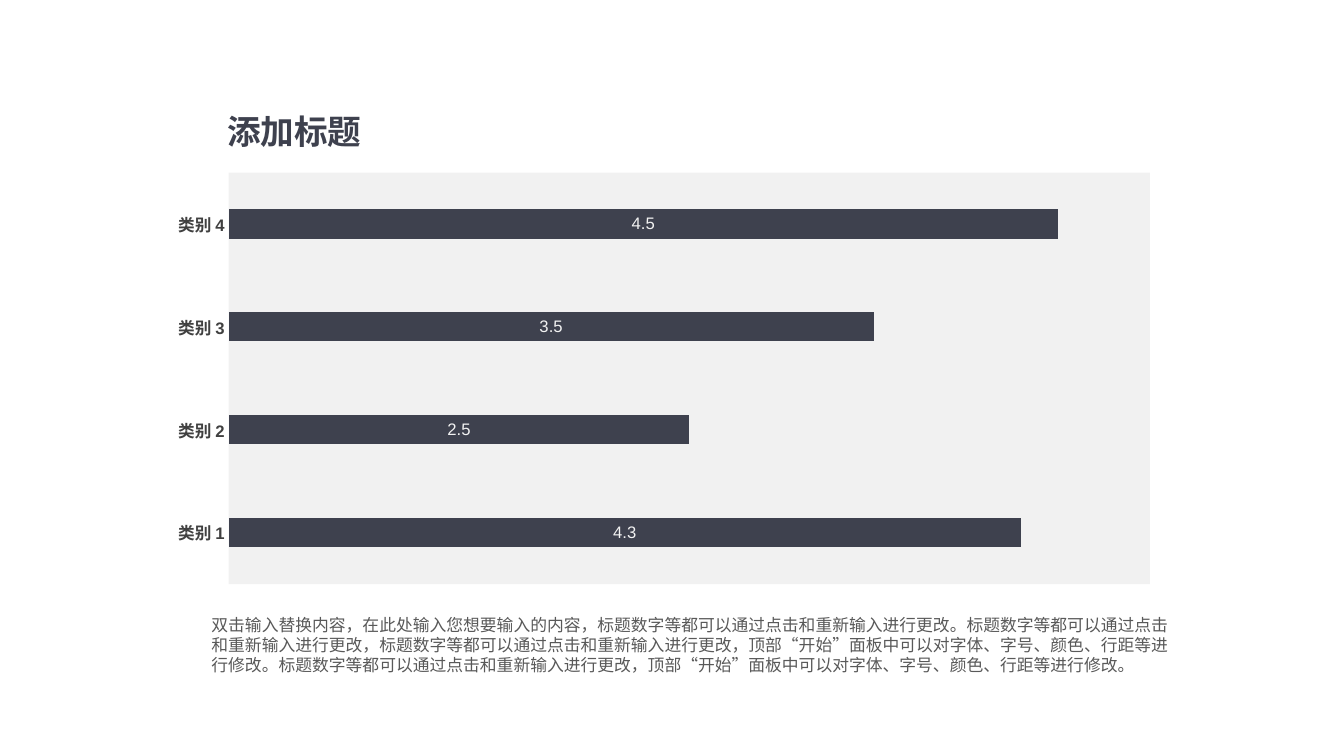
from lxml import etree
from pptx import Presentation
from pptx.chart.data import CategoryChartData
from pptx.dml.color import RGBColor
from pptx.enum.chart import XL_CHART_TYPE, XL_LABEL_POSITION, XL_TICK_MARK
from pptx.enum.text import MSO_AUTO_SIZE, PP_ALIGN
from pptx.oxml import parse_xml
from pptx.oxml.ns import nsdecls, qn
from pptx.util import Cm, Pt

STACKED = XL_CHART_TYPE.BAR_STACKED
MIDDLE = XL_LABEL_POSITION.CENTER
NO_TICK = XL_TICK_MARK.NONE
GROW = MSO_AUTO_SIZE.SHAPE_TO_FIT_TEXT
LEFT, CENTER = PP_ALIGN.LEFT, PP_ALIGN.CENTER

NAVY = RGBColor(0x3E, 0x41, 0x4E)
DARK = RGBColor(0x40, 0x40, 0x40)
GREY = RGBColor(0x59, 0x59, 0x59)
PALE = RGBColor(0xF2, 0xF2, 0xF2)
PANEL = RGBColor(0xF1, 0xF1, 0xF1)

HEAD = {"name": "Arial", "size": Pt(24), "bold": True, "color": NAVY}
BODY = {"name": "Arial", "size": Pt(12), "color": GREY}
BASE = {"name": "Arial", "size": Pt(10), "color": PALE}
AXIS = {"name": "Arial", "size": Pt(11.9), "bold": True, "color": DARK}
LABEL = {"name": "Arial", "size": Pt(11.9), "bold": False, "color": PALE}

TITLE = "添加标题"
NOTE = (
    "双击输入替换内容，在此处输入您想要输入的内容，标题数字等都可以通过点击和重新输入进行更改。"
    "标题数字等都可以通过点击和重新输入进行更改，标题数字等都可以通过点击和重新输入进行更改，"
    "顶部“开始”面板中可以对字体、字号、颜色、行距等进行修改。"
    "标题数字等都可以通过点击和重新输入进行更改，"
    "顶部“开始”面板中可以对字体、字号、颜色、行距等进行修改。"
)
VALUES = {"类别 1": 4.3, "类别 2": 2.5, "类别 3": 3.5, "类别 4": 4.5}
INNER = {"x": 0.086, "y": 0.035, "w": 0.914, "h": 0.93}


def style(font, form):
    for key, value in form.items():
        if key == "color":
            font.color.rgb = value
        else:
            setattr(font, key, value)


def add_text(slide, box, text, form, align):
    frame = slide.shapes.add_textbox(*map(Cm, box)).text_frame
    frame.word_wrap = True
    frame.auto_size = GROW
    para = frame.paragraphs[0]
    para.alignment = align
    run = para.add_run()
    run.text = text
    style(run.font, form)


def set_plot(chart):
    """Fix the inner plot area and fill it."""
    area = chart.element.find(".//" + qn("c:plotArea"))
    for old in area.findall(qn("c:layout")):
        area.remove(old)
    layout = parse_xml(f"<c:layout {nsdecls('c')}><c:manualLayout/></c:layout>")
    parts = {"layoutTarget": "inner", "xMode": "edge", "yMode": "edge", **INNER}
    for tag, value in parts.items():
        etree.SubElement(layout[0], qn("c:" + tag), val=str(value))
    area.insert(0, layout)
    area.append(parse_xml(
        f"<c:spPr {nsdecls('c', 'a')}><a:solidFill>"
        f'<a:srgbClr val="{PANEL}"/></a:solidFill></c:spPr>'
    ))


def add_bars(slide, box):
    data = CategoryChartData()
    data.categories = list(VALUES)
    data.add_series("Series 1", list(VALUES.values()))
    chart = slide.shapes.add_chart(STACKED, *map(Cm, box), data).chart
    chart.has_title = chart.has_legend = False
    style(chart.font, BASE)
    set_plot(chart)

    # Axes
    names = chart.category_axis
    names.major_tick_mark = names.minor_tick_mark = NO_TICK
    names.format.line.fill.background()
    style(names.tick_labels.font, AXIS)
    scale = chart.value_axis
    form = {"minimum_scale": 0, "maximum_scale": 5,
            "has_major_gridlines": False, "visible": False}
    for key, value in form.items():
        setattr(scale, key, value)

    # Bars and their values
    plot = chart.plots[0]
    form = {"gap_width": 254, "overlap": 100,
            "vary_by_categories": False, "has_data_labels": True}
    for key, value in form.items():
        setattr(plot, key, value)
    fill = plot.series[0].format.fill
    fill.solid()
    fill.fore_color.rgb = NAVY
    labels = plot.data_labels
    labels.show_value = True
    labels.position = MIDDLE
    style(labels.font, LABEL)


def add_page(deck, box):
    slide = deck.slides.add_slide(deck.slide_layouts[6])
    left, top, width, height = box
    # Chart, then the title above and the note below it
    add_bars(slide, (left, top, width, height))
    add_text(slide, (left + 1.5, top - 1.29, 4.67, 1.27), TITLE, HEAD, CENTER)
    add_text(slide, (left + 1.5, top + height + 0.26, 24.87, 1.8), NOTE, BODY, LEFT)


def main():
    deck = Presentation()
    deck.slide_width, deck.slide_height = Cm(33.87), Cm(19.05)
    add_page(deck, (3.58, 3.96, 25.4, 11.15))
    deck.save("out.pptx")


if __name__ == "__main__":
    main()
